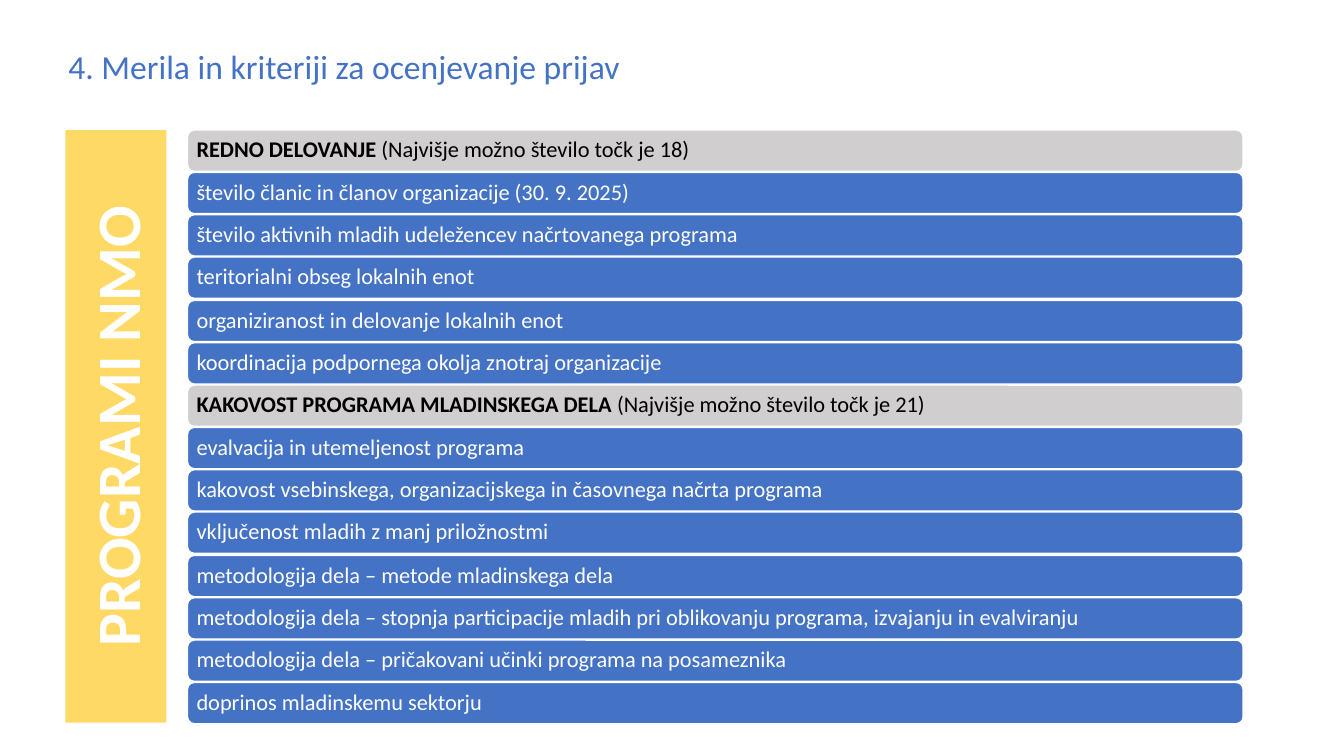
"""Build the slide with the assessment criteria for youth programmes."""
from pptx import Presentation
from pptx import util as u
from pptx.dml.color import RGBColor
from pptx.enum import shapes, text

PX = 9144
FONT = "Calibri"
BLUE = RGBColor(0x44, 0x72, 0xC4)
GREY = RGBColor(0xD0, 0xCE, 0xCE)
YELLOW = RGBColor(0xFF, 0xD9, 0x66)
WHITE = RGBColor(0xFF, 0xFF, 0xFF)
BLACK = RGBColor(0, 0, 0)

SECTIONS = [
    ("REDNO DELOVANJE ", "(Najvišje možno število točk je 18)", [
        "število članic in članov organizacije (30. 9. 2025)",
        "število aktivnih mladih udeležencev načrtovanega programa",
        "teritorialni obseg lokalnih enot",
        "organiziranost in delovanje lokalnih enot",
        "koordinacija podpornega okolja znotraj organizacije",
    ]),
    ("KAKOVOST PROGRAMA MLADINSKEGA DELA ", "(Najvišje možno število točk je 21)", [
        "evalvacija in utemeljenost programa",
        "kakovost vsebinskega, organizacijskega in časovnega načrta programa",
        "vključenost mladih z manj priložnostmi",
        "metodologija dela – metode mladinskega dela",
        "metodologija dela – stopnja participacije mladih pri oblikovanju programa, "
        "izvajanju in evalviranju",
        "metodologija dela – pričakovani učinki programa na posameznika",
        "doprinos mladinskemu sektorju",
    ]),
]
FIRST_TOP, LAST_TOP = 129, 677


def px(*lengths):
    """Turn px lengths into EMU."""
    return [u.Emu(n * PX) for n in lengths]


def write(p, content, size=16, color=WHITE, bold=False):
    """Add a formatted run to a paragraph."""
    r = p.add_run()
    r.text = content
    r.font.name = FONT
    r.font.size = u.Pt(size)
    r.font.bold = bold
    r.font.color.rgb = color


def add_title(slide, content):
    """Add the slide title on one unwrapped line."""
    tf = slide.shapes.add_textbox(*px(58, 41, 572, 50)).text_frame
    tf.word_wrap = False
    tf.auto_size = text.MSO_AUTO_SIZE.SHAPE_TO_FIT_TEXT
    write(tf.paragraphs[0], content, size=24, color=BLUE)


def add_box(slide, kind, box, fill):
    """Add a filled shape without shadow or outline."""
    sp = slide.shapes.add_shape(kind, *px(*box))
    sp.shadow.inherit = False
    sp.fill.solid()
    sp.fill.fore_color.rgb = fill
    sp.line.fill.background()
    sp.text_frame.word_wrap = True
    sp.text_frame.vertical_anchor = text.MSO_ANCHOR.MIDDLE
    return sp


def add_bar(slide, top, fill):
    """Add a rounded bar and return its paragraph."""
    sp = add_box(slide, shapes.MSO_SHAPE.ROUNDED_RECTANGLE, (186, top, 1047, 41), fill)
    sp.line.color.rgb = WHITE
    sp.line.width = u.Pt(1)
    tf = sp.text_frame
    tf.margin_left, tf.margin_top, tf.margin_right, tf.margin_bottom = px(7, 7, 7, 7)
    p = tf.paragraphs[0]
    p.alignment = text.PP_ALIGN.LEFT
    p.line_spacing = 0.9
    return p


def add_sections(slide):
    """Stack section headings and their criteria at an even pitch."""
    count = sum(1 + len(criteria) for _, _, criteria in SECTIONS)
    tops = iter([FIRST_TOP + round(i * (LAST_TOP - FIRST_TOP) / (count - 1))
                 for i in range(count)])
    for heading, points, criteria in SECTIONS:
        p = add_bar(slide, next(tops), GREY)
        write(p, heading, color=BLACK, bold=True)
        write(p, points, color=BLACK)
        for criterion in criteria:
            write(add_bar(slide, next(tops), BLUE), criterion)


def add_side_label(slide, content):
    """Add the yellow panel with text reading upwards."""
    sp = add_box(slide, shapes.MSO_SHAPE.RECTANGLE, (65, 129, 100, 588), YELLOW)
    tf = sp.text_frame
    tf._txBody.bodyPr.set("vert", "vert270")
    p = tf.paragraphs[0]
    p.alignment = text.PP_ALIGN.CENTER
    write(p, content, size=44, bold=True)


def main():
    """Build and save the presentation."""
    prs = Presentation()
    prs.slide_width, prs.slide_height = px(1333, 750)
    slide = prs.slides.add_slide(prs.slide_layouts[6])
    add_title(slide, "4. Merila in kriteriji za ocenjevanje prijav")
    add_sections(slide)
    add_side_label(slide, "PROGRAMI NMO")
    prs.save("out.pptx")


if __name__ == "__main__":
    main()
